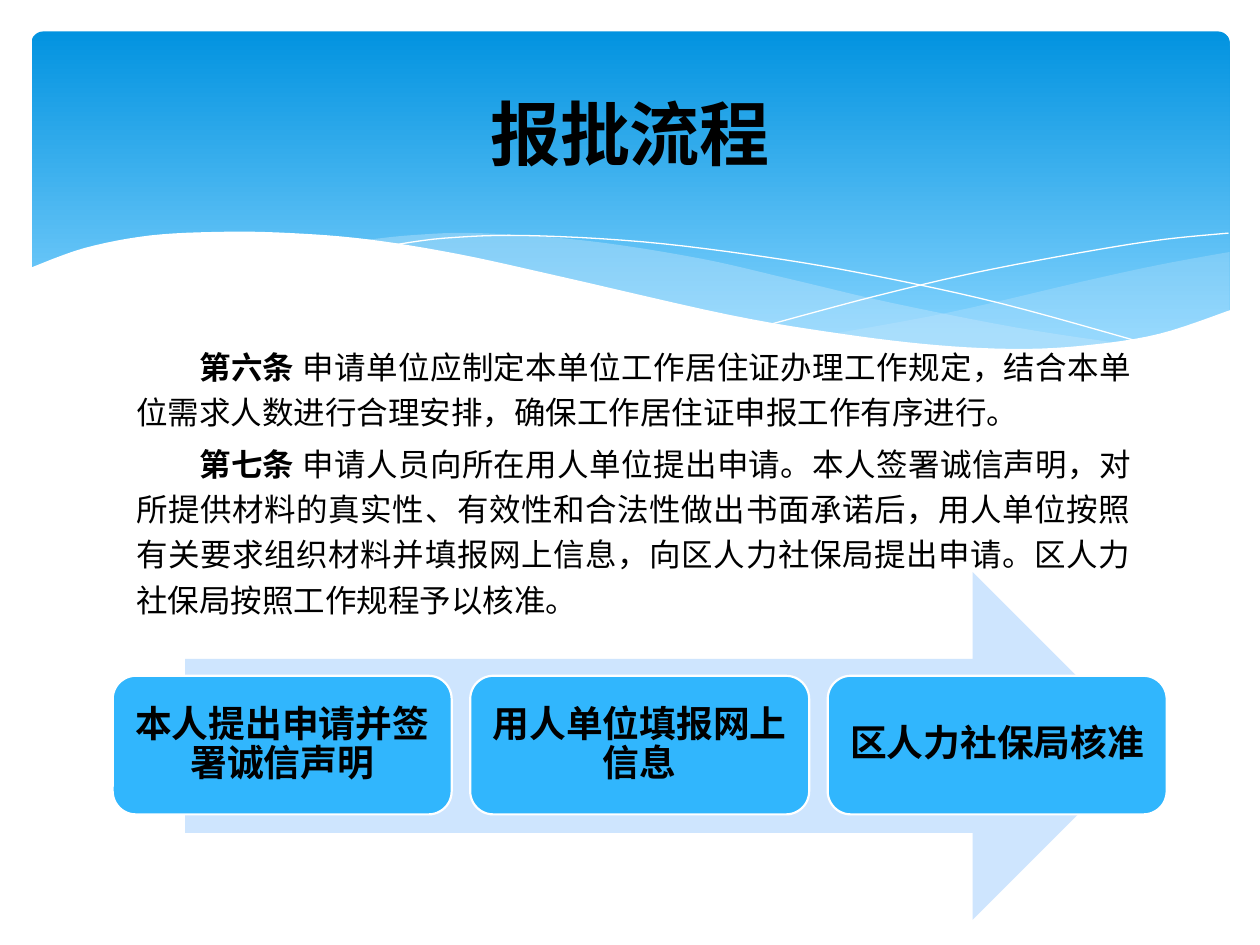
from lxml import etree
from pptx import Presentation
from pptx.dml.color import RGBColor
from pptx.enum.shapes import MSO_SHAPE
from pptx.enum.text import MSO_ANCHOR, MSO_AUTO_SIZE, PP_ALIGN
from pptx.oxml.ns import qn
from pptx.util import Pt

ROUNDED = MSO_SHAPE.ROUNDED_RECTANGLE
ARROW = MSO_SHAPE.RIGHT_ARROW
MIDDLE, TOP = MSO_ANCHOR.MIDDLE, MSO_ANCHOR.TOP
CENTER, JUSTIFY = PP_ALIGN.CENTER, PP_ALIGN.JUSTIFY
NO_AUTOSIZE = MSO_AUTO_SIZE.NONE

BLACK = RGBColor(0x00, 0x00, 0x00)
WHITE = RGBColor(0xFF, 0xFF, 0xFF)
SKY_TOP = RGBColor(0x02, 0x93, 0xE0)
SKY_BOTTOM = RGBColor(0x83, 0xD3, 0xFE)
WAVE_BLUE = RGBColor(0xC6, 0xE7, 0xFC)
ARROW_BLUE = RGBColor(0xCE, 0xE5, 0xFE)
STEP_BLUE = RGBColor(0x31, 0xB6, 0xFD)
CHINESE_FONT = "Noto Sans CJK SC"
CURVE_STEPS = 6


def add_text(paragraph, text, size=18, bold=False, font=CHINESE_FONT, color=BLACK):
    run = paragraph.add_run()
    run.text = text
    run.font.size = Pt(size)
    run.font.bold = bold
    run.font.name = font
    run.font.color.rgb = color
    east_asian = etree.SubElement(run._r.get_or_add_rPr(), qn("a:ea"))
    east_asian.set("typeface", CHINESE_FONT)


def smooth_curve(knots):
    padded = [knots[0], *knots, knots[-1]]
    points = [knots[0]]
    for before, start, end, after in zip(padded, padded[1:], padded[2:], padded[3:]):
        for step in range(1, CURVE_STEPS + 1):
            t = step / CURVE_STEPS
            points.append(tuple(
                b + t * (c - a) / 2
                + t ** 2 * (a - 2.5 * b + 2 * c - d / 2)
                + t ** 3 * (1.5 * (b - c) + (d - a) / 2)
                for a, b, c, d in zip(before, start, end, after)
            ))
    return points


presentation = Presentation()
presentation.slide_width = Pt(720)
presentation.slide_height = Pt(540)
slide = presentation.slides.add_slide(presentation.slide_layouts[1])
shapes = slide.shapes

banner = shapes.add_shape(ROUNDED, Pt(18), Pt(18), Pt(684.7), Pt(194.4))
banner.adjustments[0] = 0.034
banner.shadow.inherit = False
banner.line.fill.background()
banner.fill.gradient()
banner.fill.gradient_angle = 270
for stop, color, position in zip(banner.fill.gradient_stops, (SKY_TOP, SKY_BOTTOM), (0, 0.9)):
    stop.color.rgb = color
    stop.position = position

right_wave = smooth_curve([
    (702.7, 144), (663.1, 151.2), (619.9, 160.6), (542.2, 178.6), (475.9, 190.8),
]) + smooth_curve([
    (475.9, 190.8), (517.7, 195.8), (562.3, 199.4), (593.3, 199.8), (627.8, 197.3),
    (663.1, 190.8), (702.7, 177.8),
])
middle_wave = smooth_curve([
    (643, 196.6), (581, 187.2), (508.3, 172.8), (452.9, 159.8), (399.6, 147.6),
    (334.8, 137.5), (273.6, 133.2), (236.2, 134.3), (205.9, 137.5),
]) + smooth_curve([
    (205.9, 137.5), (260.6, 146.2), (323.3, 159.8), (407.5, 178.6), (468, 190.1),
    (519.8, 197.3), (573.1, 200.2), (610.6, 199.4), (643, 196.6),
])
falling_line = smooth_curve([
    (222.5, 140.4), (254.2, 136.1), (299.5, 134.6), (367.2, 138.2), (437.8, 146.9),
    (500.4, 157.7), (572.4, 173.5), (653, 195.8),
])
rising_line = smooth_curve([
    (441.4, 185), (500.4, 169.2), (558.7, 155.5), (623.5, 143.3), (665.3, 136.8),
    (702, 133.2),
])
white_wave = smooth_curve([
    (703.4, 177.1), (662.4, 190.8), (621.4, 197.3), (582.5, 199.4), (535.7, 197.3),
    (481, 190.8), (416.9, 180), (321.8, 158.4), (262.8, 145.4), (210.2, 136.8),
    (165.6, 133.2), (127.4, 132.5), (85.7, 134.6), (48.2, 141.8), (16.6, 153.4),
]) + [(16.6, 236.9), (703.4, 236.9)]

for points, fill, opacity in (
    (right_wave, WAVE_BLUE, 29),
    (middle_wave, WAVE_BLUE, 40),
    (falling_line, None, 100),
    (rising_line, None, 100),
    (white_wave, WHITE, 100),
):
    corners = [(Pt(x), Pt(y)) for x, y in points]
    builder = shapes.build_freeform(*corners[0])
    builder.add_line_segments(corners[1:], close=fill is not None)
    wave = builder.convert_to_shape()
    wave.shadow.inherit = False
    if fill is None:
        wave.fill.background()
        wave.line.color.rgb = WHITE
        wave.line.width = Pt(0)
    else:
        wave.line.fill.background()
        wave.fill.solid()
        wave.fill.fore_color.rgb = fill
        if opacity < 100:
            alpha = etree.SubElement(wave.element.find(".//" + qn("a:srgbClr")), qn("a:alpha"))
            alpha.set("val", str(opacity * 1000))

title = shapes.title
body = slide.placeholders[1]
for placeholder, left, top, width, height, anchor in (
    (title, 36, 26.6, 648, 98.6, MIDDLE),
    (body, 70.6, 190.8, 583.2, 271.4, TOP),
):
    placeholder.left, placeholder.top = Pt(left), Pt(top)
    placeholder.width, placeholder.height = Pt(width), Pt(height)
    placeholder.text_frame.vertical_anchor = anchor
    placeholder.text_frame.word_wrap = True
    placeholder.text_frame.auto_size = NO_AUTOSIZE
    placeholder.element.getparent().append(placeholder.element)

heading = title.text_frame.paragraphs[0]
heading.alignment = CENTER
add_text(heading, "报批流程", size=40, bold=True)

articles = (
    ("第六条 ", "申请单位应制定本单位工作居住证办理工作规定，结合本单位需求人数进行合理安排，"
     "确保工作居住证申报工作有序进行。"),
    ("第七条 ", "申请人员向所在用人单位提出申请。本人签署诚信声明，对所提供材料的真实性、"
     "有效性和合法性做出书面承诺后，用人单位按照有关要求组织材料并填报网上信息，"
     "向区人力社保局提出申请。区人力社保局按照工作规程予以核准。"),
)
for index, (number, content) in enumerate(articles):
    frame = body.text_frame
    paragraph = frame.add_paragraph() if index else frame.paragraphs[0]
    paragraph.alignment = JUSTIFY
    paragraph.line_spacing = 1.2
    paragraph.space_before = Pt(3.6)
    properties = paragraph._p.get_or_add_pPr()
    properties.set("marL", "0")
    properties.set("indent", str(Pt(36)))
    etree.SubElement(properties, qn("a:buNone"))
    add_text(paragraph, number, bold=True)
    add_text(paragraph, content)

arrow = shapes.add_shape(ARROW, Pt(105.8), Pt(326.9), Pt(549.4), Pt(198.7))
arrow.shadow.inherit = False
arrow.fill.solid()
arrow.fill.fore_color.rgb = ARROW_BLUE
arrow.line.fill.background()

steps = ("本人提出申请并签署诚信声明", "用人单位填报网上信息", "区人力社保局核准")
for index, text in enumerate(steps):
    step_box = shapes.add_shape(ROUNDED, Pt(64.4 + index * 204.3), Pt(386.2), Pt(193.7), Pt(79.2))
    step_box.shadow.inherit = False
    step_box.fill.solid()
    step_box.fill.fore_color.rgb = STEP_BLUE
    step_box.line.color.rgb = WHITE
    step_box.line.width = Pt(1.25)
    frame = step_box.text_frame
    frame.word_wrap = True
    frame.vertical_anchor = MIDDLE
    frame.margin_left = frame.margin_right = Pt(6.5)
    paragraph = frame.paragraphs[0]
    paragraph.alignment = CENTER
    paragraph.line_spacing = 0.9
    add_text(paragraph, text, size=21, bold=True, font="Calibri")

presentation.save("out.pptx")
